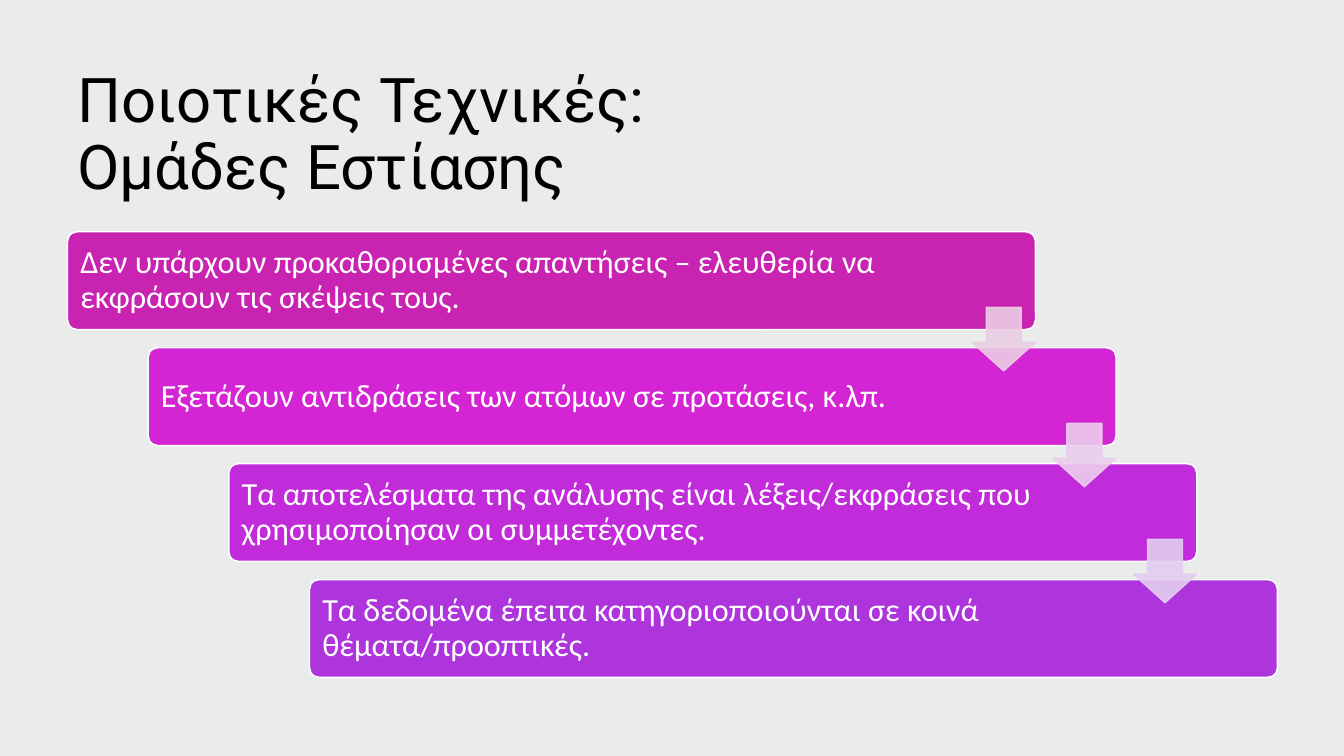
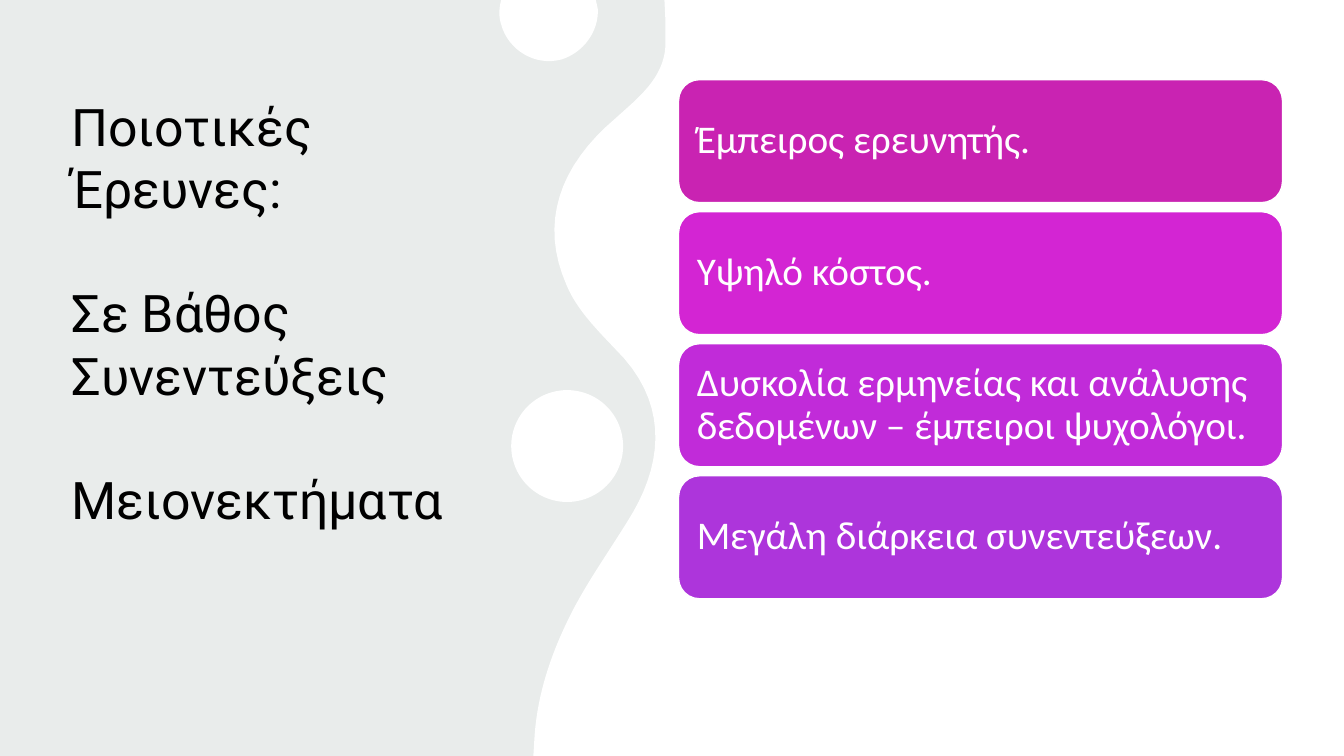
from lxml import etree
from pptx import Presentation, util as u
from pptx.dml.color import RGBColor
from pptx.enum import shapes, text
from pptx.oxml.ns import qn

PX = 9144  # EMU, 100 px to the inch
WIDE, HIGH = 1333, 750
GREY = RGBColor(0xE9, 0xEC, 0xEB)
WHITE = RGBColor(0xFF, 0xFF, 0xFF)
BLACK = RGBColor(0x00, 0x00, 0x00)
PINK = RGBColor(0xC9, 0x23, 0xB2)
ROSE = RGBColor(0xD3, 0x25, 0xD3)
VIOLET = RGBColor(0xC1, 0x2B, 0xD9)
PURPLE = RGBColor(0xAD, 0x35, 0xDB)
TINTS = (RGBColor(0xEB, 0xCD, 0xE4), RGBColor(0xEC, 0xCD, 0xEE),
         RGBColor(0xE3, 0xCE, 0xF1))
BARS = (PINK, ROSE, VIOLET, PURPLE)
KIND = shapes.MSO_SHAPE


def curve(a, b, c, d, steps=16):
    """Points of a cubic Bezier curve from a to d, without a."""
    for i in range(1, steps + 1):
        t = i / steps
        s = 1 - t
        yield tuple(s**3 * p + 3 * s * s * t * q + 3 * s * t * t * r + t**3 * e
                    for p, q, r, e in zip(a, b, c, d))


class Deck:
    def __init__(self):
        self.prs = Presentation()
        self.prs.slide_width, self.prs.slide_height = WIDE * PX, HIGH * PX
        back = self.prs.slide_master.background.fill
        back.solid()
        back.fore_color.rgb = GREY
        self.slide = None

    def page(self, title, box, size, anchor, space):
        self.slide = self.prs.slides.add_slide(self.prs.slide_layouts[5])
        head = self.slide.shapes.title
        head.left, head.top, head.width, head.height = (n * PX for n in box)
        frame = head.text_frame
        frame.text = title
        frame.word_wrap = True
        frame.auto_size = text.MSO_AUTO_SIZE.NONE
        frame.vertical_anchor = anchor
        self.style(frame.paragraphs[0], "Roboto", size, BLACK, space)

    def style(self, para, name, size, color, space):
        para.alignment = text.PP_ALIGN.LEFT
        para.line_spacing = space
        para.font.name = name
        para.font.size = u.Pt(size)
        para.font.color.rgb = color

    def paint(self, shape, fill, line=None):
        shape.shadow.inherit = False
        shape.fill.solid()
        shape.fill.fore_color.rgb = fill
        if line is None:
            shape.line.fill.background()
        else:
            shape.line.color.rgb = line
            shape.line.width = u.Pt(1)

    def shape(self, kind, box, fill, line=None):
        shape = self.slide.shapes.add_shape(kind, *(n * PX for n in box))
        self.paint(shape, fill, line)
        return shape

    def bar(self, words, box, fill, size, round_, left, right):
        """Rounded box with text; left and right are the text insets."""
        shape = self.shape(KIND.ROUNDED_RECTANGLE, box, fill, WHITE)
        shape.adjustments[0] = round_
        frame = shape.text_frame
        frame.text = words
        frame.word_wrap = True
        frame.vertical_anchor = text.MSO_ANCHOR.MIDDLE
        frame.margin_left, frame.margin_right = left * PX, right * PX
        frame.margin_top = frame.margin_bottom = 0
        self.style(frame.paragraphs[0], "Calibri", size, WHITE, 0.9)

    def arrow(self, box, tint):
        shape = self.shape(KIND.DOWN_ARROW, box, tint, tint)
        shape.adjustments[0], shape.adjustments[1] = 0.55, 0.45
        for color in shape.element.spPr.iter(qn("a:srgbClr")):
            etree.SubElement(color, qn("a:alpha"), val="90000")

    def wave(self, start, *parts):
        """White outline; a part is a line (x, y) or a curve of six numbers."""
        dots = [start]
        for part in parts:
            if len(part) == 2:
                dots.append(part)
            else:
                dots.extend(curve(dots[-1], part[:2], part[2:4], part[4:]))
        dots = [(x * PX, y * PX) for x, y in dots]
        form = self.slide.shapes.build_freeform(*dots[0], scale=1.0)
        form.add_line_segments(dots[1:], close=True)
        self.paint(form.convert_to_shape(), WHITE)


def focus(deck):
    deck.page("Ποιοτικές Τεχνικές: \vΟμάδες Εστίασης", (67, 61, 1200, 145),
              44, text.MSO_ANCHOR.BOTTOM, 0.9)
    steps = (
        "Δεν υπάρχουν προκαθορισμένες απαντήσεις – ελευθερία να εκφράσουν τις σκέψεις τους.",
        "Εξετάζουν αντιδράσεις των ατόμων σε προτάσεις, κ.λπ.",
        "Τα αποτελέσματα της ανάλυσης είναι λέξεις/εκφράσεις που χρησιμοποίησαν οι συμμετέχοντες.",
        "Τα δεδομένα έπειτα κατηγοριοποιούνται σε κοινά θέματα/προοπτικές.",
    )
    left, top, wide, high, side = 67, 230, 960, 97, 63
    spots = [(left + 80 * i, top + 115 * i) for i in range(len(steps))]
    for words, (x, y), fill in zip(steps, spots, BARS):
        deck.bar(words, (x, y, wide, high), fill, 23, 0.1, 10, 147)
    for (x, y), tint in zip(spots, TINTS):
        deck.arrow((x + wide - side, y + 75, side, side), tint)


def depth(deck):
    deck.page("Ποιοτικές Έρευνες: \v\vΣε Βάθος Συνεντεύξεις\v\vΜειονεκτήματα",
              (61, 89, 405, 592), 37, text.MSO_ANCHOR.TOP, 1.0)
    deck.wave((529, HIGH), (530, 734),
              (532, 696, 543, 658, 561, 620), (579, 581, 606, 545, 628, 508),
              (659, 454, 661, 396, 610, 346), (592, 327, 572, 307, 562, 283),
              (535, 222, 554, 165, 611, 117), (633, 97, 658, 78, 660, 46),
              (660, 37, 660, 29, 660, 20), (659, 0), (WIDE, 0), (WIDE, HIGH))
    deck.wave((591, 0), (593, 9), (594, 31, 579, 52, 557, 59),
              (531, 66, 504, 50, 497, 24), (495, 18, 495, 11, 496, 5), (497, 0))
    deck.shape(KIND.OVAL, (507, 387, 111, 111), WHITE)
    flaws = (
        "Έμπειρος ερευνητής.",
        "Υψηλό κόστος.",
        "Δυσκολία ερμηνείας και ανάλυσης δεδομένων – έμπειροι ψυχολόγοι.",
        "Μεγάλη διάρκεια συνεντεύξεων.",
    )
    for i, (words, fill) in enumerate(zip(flaws, BARS)):
        deck.bar(words, (673, 79 + 131 * i, 599, 122), fill, 28, 0.17, 12, 12)


def main():
    deck = Deck()
    focus(deck)
    depth(deck)
    deck.prs.save("out.pptx")


if __name__ == "__main__":
    main()
